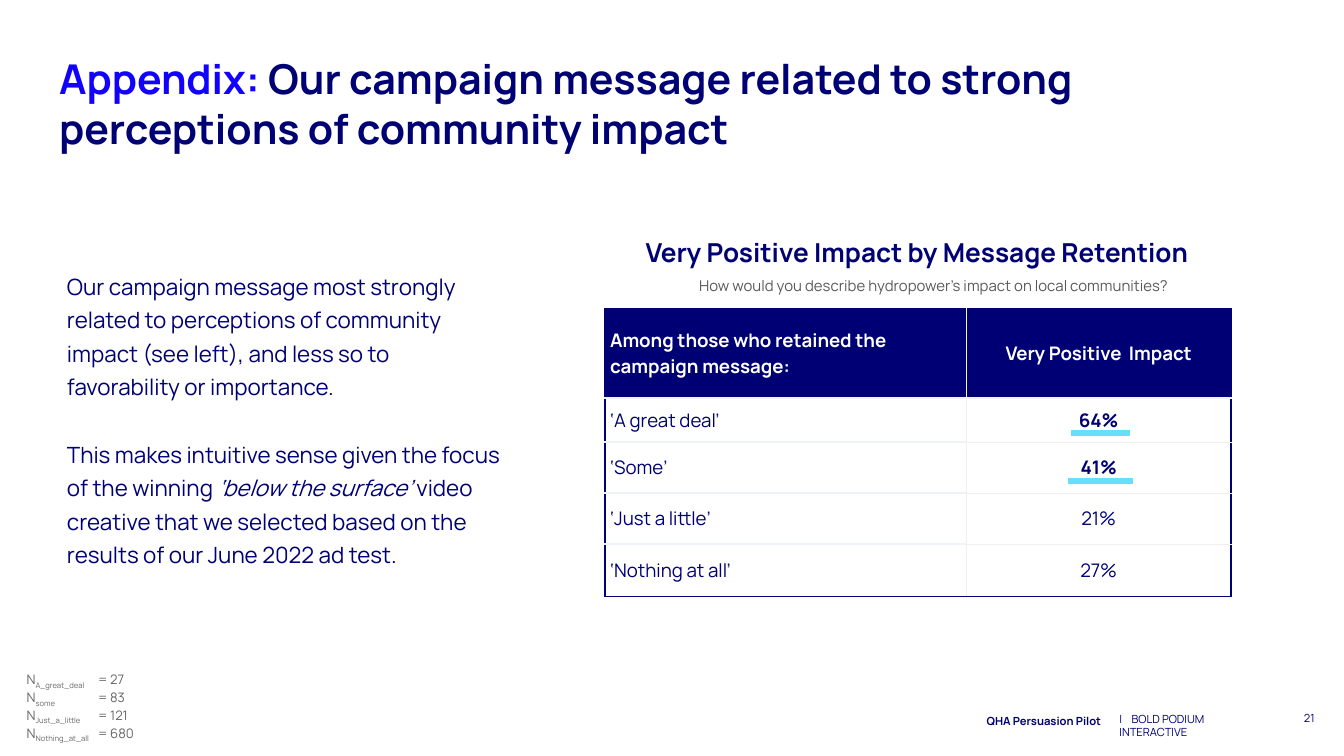
from lxml.etree import SubElement
from pptx import Presentation
from pptx.dml.color import RGBColor
from pptx.enum.shapes import MSO_CONNECTOR
from pptx.enum.text import MSO_ANCHOR, PP_ALIGN
from pptx.oxml.ns import qn
from pptx.util import Inches, Pt

FONT = "Manrope"
NAVY = RGBColor(0x00, 0x00, 0x75)
BLUE = RGBColor(0x11, 0x00, 0xFF)
CYAN = RGBColor(0x65, 0xDF, 0xFC)
WHITE = RGBColor(0xFF, 0xFF, 0xFF)
PALE = RGBColor(0xED, 0xF3, 0xF9)
LIGHT = RGBColor(0xEF, 0xEF, 0xEF)
GRAY = RGBColor(0x59, 0x59, 0x59)
NOTE_GRAY = RGBColor(0x66, 0x66, 0x66)

HEADERS = ("Among those who retained the campaign message:", "Very Positive  Impact")
RESULTS = [("‘A great deal’", "64%"), ("‘Some’", "41%"),
           ("‘Just a little’", "21%"), ("‘Nothing at all’", "27%")]
COL_WIDTHS = (2.69, 1.97)
ROW_HEIGHTS = (0.66, 0.33, 0.38, 0.38, 0.39)
SAMPLES = [("A_great_deal", 27), ("some", 83), ("Just_a_little", 121),
           ("Nothing_at_all", 680)]


def add_run(p, text, size, color, bold=False, italic=False):
    r = p.add_run()
    r.text = text
    r.font.name = FONT
    r.font.size = Pt(size)
    r.font.color.rgb = color
    r.font.bold = bold
    r.font.italic = italic
    return r


def add_tab(p, position):
    tabs = SubElement(p._p.get_or_add_pPr(), qn("a:tabLst"))
    SubElement(tabs, qn("a:tab"), pos=str(Inches(position)), algn="l")


def add_box(slide, left, top, width, height, inset_x=0.1, inset_y=0.1,
            anchor=MSO_ANCHOR.TOP):
    sp = slide.shapes.add_textbox(Inches(left), Inches(top), Inches(width), Inches(height))
    tf = sp.text_frame
    tf.word_wrap = True
    tf.vertical_anchor = anchor
    tf.margin_left = tf.margin_right = Inches(inset_x)
    tf.margin_top = tf.margin_bottom = Inches(inset_y)
    return tf


def add_line_of_text(tf, text, size, color, bold=False, align=PP_ALIGN.LEFT, spacing=None):
    p = tf.paragraphs[0]
    p.alignment = align
    p.line_spacing = spacing
    add_run(p, text, size, color, bold)


def add_body(slide):
    tf = add_box(slide, 0.4, 1.93, 3.43, 2.58, inset_y=0.05)
    first, second = tf.paragraphs[0], tf.add_paragraph()
    first.line_spacing = second.line_spacing = 1.25
    second.space_before = Pt(18)
    add_run(first, "Our campaign message most strongly related to perceptions of community "
            "impact (see left), and less so to favorability or importance.", 12, NAVY)
    add_run(second, "This makes intuitive sense given the focus of the winning ", 12, NAVY)
    add_run(second, "‘below the surface’ ", 12, NAVY, italic=True)
    add_run(second, "video creative that we selected based on the results of our "
            "June 2022 ad test.", 12, NAVY)


def set_border(cell, side, color, width):
    ln = SubElement(cell._tc.get_or_add_tcPr(), qn(f"a:ln{side}"), w=str(Pt(width)))
    fill = SubElement(ln, qn("a:solidFill"))
    SubElement(fill, qn("a:srgbClr"), val=str(color))


def cell_borders(row, col, last_row):
    inner = (PALE, 1) if row == 0 else (LIGHT, 0.75)
    outer = (NAVY, 1)
    top = outer if row == 0 else (PALE, 1) if row == 1 or col == 0 else inner
    bottom = outer if row == last_row else (PALE, 1) if col == 0 else inner
    return {"L": outer if col == 0 else inner, "R": inner if col == 0 else outer,
            "T": top, "B": bottom}


def add_results_table(slide):
    rows = [HEADERS] + RESULTS
    table = slide.shapes.add_table(len(rows), len(COL_WIDTHS), Inches(4.5), Inches(2.3),
                                   Inches(sum(COL_WIDTHS)), Inches(sum(ROW_HEIGHTS))).table
    table.first_row = table.horz_banding = False
    for column, width in zip(table.columns, COL_WIDTHS):
        column.width = Inches(width)
    for i, (texts, height) in enumerate(zip(rows, ROW_HEIGHTS)):
        table.rows[i].height = Inches(height)
        for j, text in enumerate(texts):
            cell = table.cell(i, j)
            for side, (color, width) in cell_borders(i, j, len(rows) - 1).items():
                set_border(cell, side, color, width)
            cell.fill.solid()
            cell.fill.fore_color.rgb = NAVY if i == 0 else WHITE
            cell.vertical_anchor = MSO_ANCHOR.MIDDLE
            cell.margin_left = cell.margin_right = Inches(0.04)
            cell.margin_top = cell.margin_bottom = Inches(0.02)
            add_line_of_text(cell.text_frame, text, 10, WHITE if i == 0 else NAVY,
                             i == 0 or (j == 1 and i <= 2),
                             PP_ALIGN.CENTER if j == 1 else PP_ALIGN.LEFT)


def add_underline(slide, left, right, y):
    line = slide.shapes.add_connector(MSO_CONNECTOR.STRAIGHT, Inches(left), Inches(y),
                                      Inches(right), Inches(y))
    line.line.color.rgb = CYAN
    line.line.width = Pt(3)
    SubElement(line._element.spPr, qn("a:effectLst"))


def add_sample_sizes(slide):
    tf = add_box(slide, 0.1, 4.9, 1.51, 0.93)
    for i, (name, count) in enumerate(SAMPLES):
        p = tf.add_paragraph() if i else tf.paragraphs[0]
        add_tab(p, 0.53)
        add_run(p, "N", 7, NOTE_GRAY)
        r = add_run(p, name, 7, NOTE_GRAY)
        r._r.get_or_add_rPr().set("baseline", "-25000")
        add_run(p, f"\t= {count}", 7, NOTE_GRAY)


def add_footer(slide):
    tf = add_box(slide, 8.26, 5.26, 1.27, 0.18, 0.07, 0.04)
    add_tab(tf.paragraphs[0], 0.09)
    add_line_of_text(tf, "|\tBOLD PODIUM INTERACTIVE", 6, NAVY)
    tf = add_box(slide, 9.28, 5.13, 0.6, 0.43, anchor=MSO_ANCHOR.MIDDLE)
    add_line_of_text(tf, "21", 6, NAVY, align=PP_ALIGN.RIGHT)
    tf = add_box(slide, 1.2, 5.27, 7.09, 0.18, anchor=MSO_ANCHOR.MIDDLE)
    add_line_of_text(tf, "QHA Persuasion Pilot", 6, NAVY, True, PP_ALIGN.RIGHT, 1.15)


def main():
    prs = Presentation()
    prs.slide_width, prs.slide_height = Inches(10), Inches(10 * 9 / 16)
    s = prs.slides.add_slide(prs.slide_layouts[6])
    add_footer(s)
    title = add_box(s, 0.4, 0.38, 8.94, 0.6, 0.04, 0.02).paragraphs[0]
    add_run(title, "Appendix: ", 22, BLUE, bold=True)
    add_run(title, "Our campaign message related to strong perceptions of community impact",
            22, NAVY, bold=True)
    add_body(s)
    tf = add_box(s, 4.41, 1.71, 4.83, 0.34, inset_y=0.05)
    add_line_of_text(tf, "Very Positive Impact by Message Retention", 14, NAVY, True,
                     PP_ALIGN.CENTER)
    add_results_table(s)
    add_underline(s, 7.97, 8.41, 3.22)
    add_underline(s, 7.95, 8.43, 3.58)
    tf = add_box(s, 4.06, 1.96, 5.78, 0.34)
    add_line_of_text(tf, "How would you describe hydropower’s impact on local communities?",
                     8, GRAY, align=PP_ALIGN.CENTER, spacing=1.14)
    add_sample_sizes(s)
    prs.save("out.pptx")


if __name__ == "__main__":
    main()
